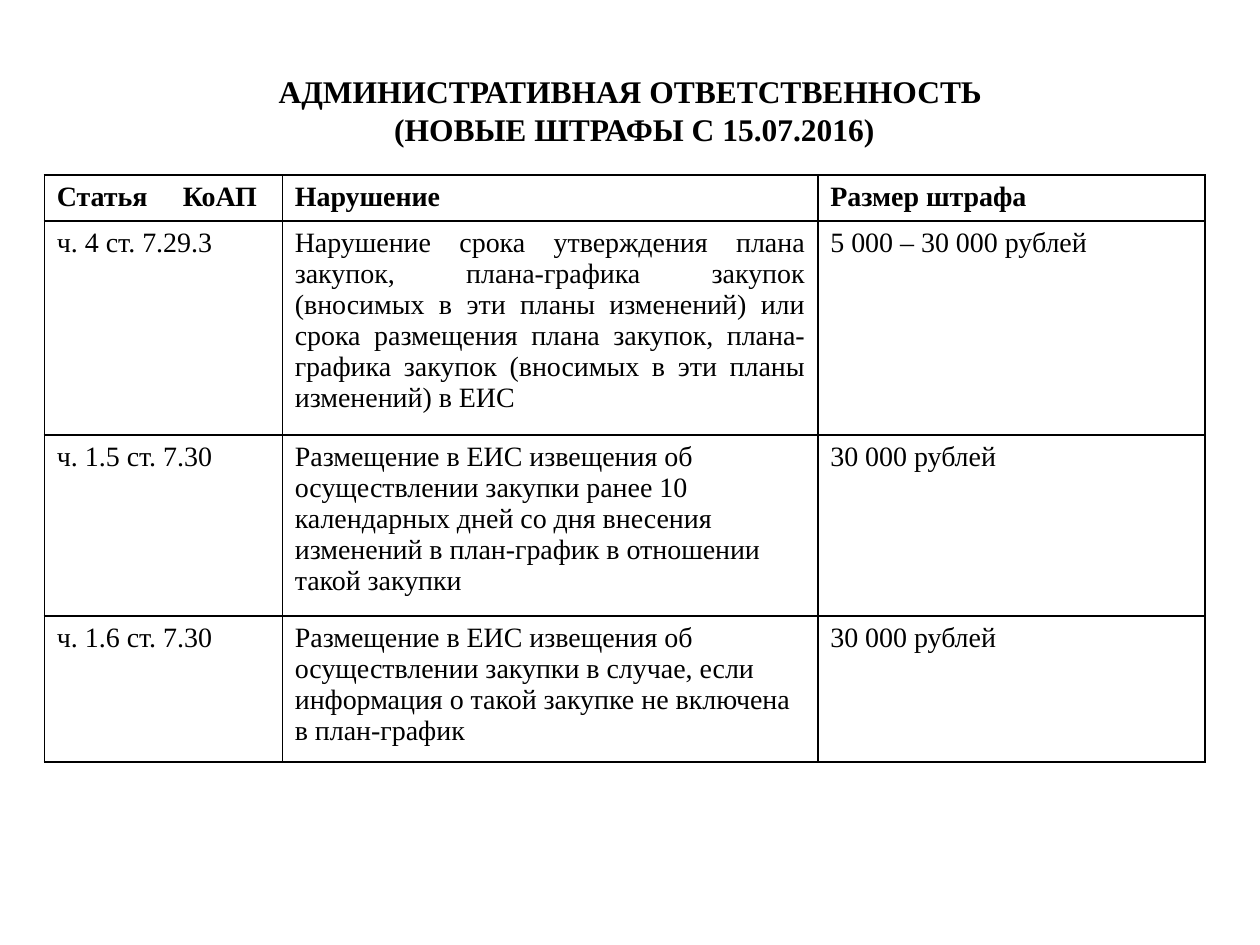
from dataclasses import dataclass

from lxml.etree import SubElement
from pptx import Presentation
from pptx.dml.color import RGBColor
from pptx.enum.text import MSO_ANCHOR, MSO_AUTO_SIZE, PP_ALIGN as Align
from pptx.oxml.ns import qn
from pptx.util import Pt

COLORS = {"text": "000000", "border": "000000"}
FONT = "Times New Roman"
LEFT = 25.3
COLUMN_WIDTHS = (136, 306, 221.2)


@dataclass(frozen=True)
class Row:
    cells: tuple[str, str, str]
    height: float
    bold: bool = False
    justified: bool = False


ROWS = (
    Row(("Статья \tКоАП", "Нарушение", "Размер штрафа"), 26.3, bold=True),
    Row(("ч. 4 ст. 7.29.3",
         "Нарушение срока утверждения плана закупок, плана-графика закупок "
         "(вносимых в эти планы изменений) или срока размещения плана закупок, "
         "плана-графика закупок (вносимых в эти планы изменений) в ЕИС",
         "5 000 – 30 000 рублей"), 122.3, justified=True),
    Row(("ч. 1.5 ст. 7.30",
         "Размещение в ЕИС извещения об осуществлении закупки ранее 10 "
         "календарных дней со дня внесения изменений в план-график "
         "в отношении такой закупки",
         "30 000 рублей"), 103.4),
    Row(("ч. 1.6 ст. 7.30",
         "Размещение в ЕИС извещения об осуществлении закупки в случае, если "
         "информация о такой закупке не включена в план-график",
         "30 000 рублей"), 83.6),
)


def write(tf, *lines: str, size: float, bold: bool = False, align=Align.LEFT) -> None:
    """Write one paragraph per line."""
    for i, line in enumerate(lines):
        p = tf.add_paragraph() if i else tf.paragraphs[0]
        p.alignment = align
        r = p.add_run()
        r.text = line
        r.font.name, r.font.size, r.font.bold = FONT, Pt(size), bold
        r.font.color.rgb = RGBColor.from_string(COLORS["text"])


def add_borders(cell, width: float = 1) -> None:
    tc_pr = cell._tc.get_or_add_tcPr()
    for side in ("lnL", "lnR", "lnT", "lnB"):
        ln = SubElement(tc_pr, qn(f"a:{side}"), w=str(Pt(width)))
        fill = SubElement(ln, qn("a:solidFill"))
        SubElement(fill, qn("a:srgbClr"), val=COLORS["border"])


def set_title(s) -> None:
    sp = s.shapes.title
    sp.left, sp.top, sp.width, sp.height = Pt(LEFT), Pt(37.5), Pt(674.5), Pt(51)
    tf = sp.text_frame
    tf.word_wrap = True
    tf.auto_size = MSO_AUTO_SIZE.NONE
    tf.vertical_anchor = MSO_ANCHOR.TOP
    write(tf, "АДМИНИСТРАТИВНАЯ ОТВЕТСТВЕННОСТЬ ", "(НОВЫЕ ШТРАФЫ С 15.07.2016)",
          size=18, bold=True, align=Align.CENTER)


def add_fines_table(s, rows: tuple[Row, ...]) -> None:
    table = s.shapes.add_table(
        len(rows), len(COLUMN_WIDTHS), Pt(LEFT), Pt(100),
        Pt(sum(COLUMN_WIDTHS)), Pt(sum(row.height for row in rows))).table
    table.first_row = table.horz_banding = False
    for column, width in zip(table.columns, COLUMN_WIDTHS):
        column.width = Pt(width)
    for i, row in enumerate(rows):
        table.rows[i].height = Pt(row.height)
        for j, text in enumerate(row.cells):
            cell = table.cell(i, j)
            add_borders(cell)
            cell.fill.background()
            align = Align.JUSTIFY if row.justified and j == 1 else Align.LEFT
            write(cell.text_frame, text, size=16, bold=row.bold, align=align)


def main() -> None:
    prs = Presentation()
    prs.slide_width, prs.slide_height = Pt(720), Pt(540)
    s = prs.slides.add_slide(prs.slide_layouts.get_by_name("Title Only"))
    set_title(s)
    add_fines_table(s, ROWS)
    prs.save("out.pptx")


if __name__ == "__main__":
    main()
